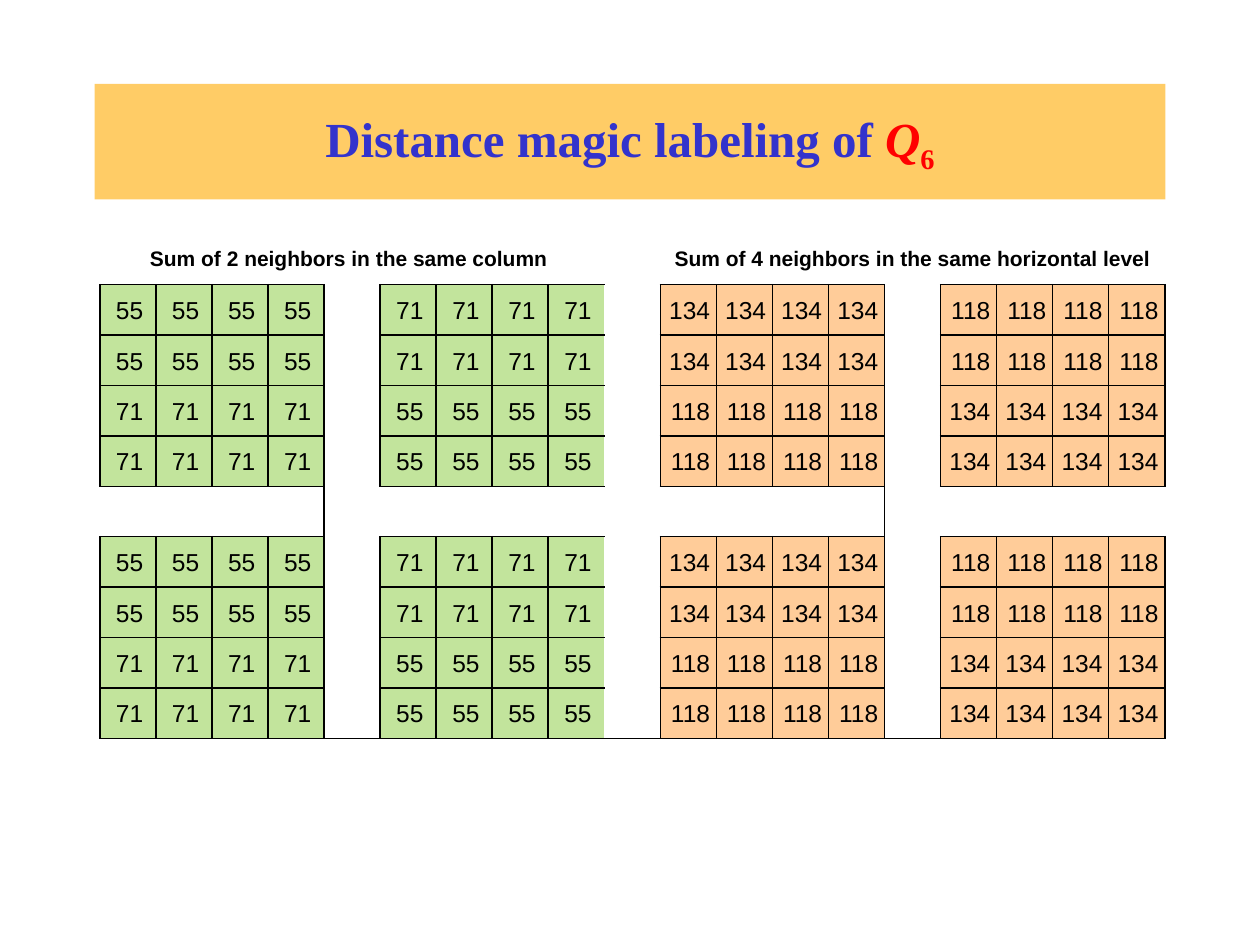
from lxml.etree import SubElement
from pptx import Presentation
from pptx.dml.color import RGBColor
from pptx.enum.text import MSO_ANCHOR, PP_ALIGN
from pptx.oxml.ns import qn
from pptx.util import Pt

BLACK = RGBColor(0x00, 0x00, 0x00)
WHITE = RGBColor(0xFF, 0xFF, 0xFF)
GOLD = RGBColor(0xFF, 0xCC, 0x66)
BLUE = RGBColor(0x33, 0x33, 0xCC)
RED = RGBColor(0xFF, 0x00, 0x00)
GREEN = RGBColor(0xC2, 0xE4, 0x9C)
PEACH = RGBColor(0xFF, 0xCC, 0x99)
NO_STYLE = "{2D5ABB26-0587-4C30-8999-92F81FD0307C}"

# text, colour, italic, baseline shift
TITLE = [("Distance magic labeling of ", BLUE, False, "0"),
         ("Q", RED, True, "0"),
         ("6", RED, False, "-25000")]
# heading, fill, right margin of numbers, right margin of heading,
# row values of the left and right block
PANELS = [
    ("Sum of 2 neighbors in the same column", GREEN, 7.2,
     [(55, 55, 71, 71), (71, 71, 55, 55)]),
    ("Sum of 4 neighbors in the same horizontal level", PEACH, 3.6,
     [(134, 134, 118, 118), (118, 118, 134, 134)]),
]
SIZE = 4           # cells along a block side
STEP = SIZE + 1    # block plus its gap
BLOCK_ROWS = (1, 1 + STEP)
N_ROWS, N_COLS = 2 * STEP + 1, 4 * STEP - 1
LEFT, TOP, WIDTH, ROW_H = 57, 133.92, 609.12, 28.8


def set_format(obj, **values):
    for name, value in values.items():
        setattr(obj, name, value)


def set_borders(cell, sides):
    """Draw black 1 pt lines on the sides named in 'LRTB' and none elsewhere."""
    tc_pr = cell._tc.get_or_add_tcPr()
    for side in "LRTB":
        ln = SubElement(tc_pr, qn(f"a:ln{side}"), w=str(Pt(1)))
        if side in sides:
            fill = SubElement(ln, qn("a:solidFill"))
            SubElement(fill, qn("a:srgbClr"), val=str(BLACK))
        else:
            SubElement(ln, qn("a:noFill"))


def write(cell, text, size, bold, align, right):
    set_format(cell, margin_left=Pt(3.6), margin_top=Pt(7.2),
               margin_right=Pt(right), margin_bottom=Pt(3.6),
               vertical_anchor=MSO_ANCHOR.TOP)
    p = cell.text_frame.paragraphs[0]
    p.alignment = align
    r = p.add_run()
    r.text = str(text)
    set_format(r.font, name="Arial", size=Pt(size), bold=bold)
    r.font.color.rgb = BLACK


def merge(table, row, col, n_rows, n_cols, sides):
    """Merge an area of cells, border it and return its first cell."""
    for i in range(row, row + n_rows):
        for j in range(col, col + n_cols):
            cell = table.cell(i, j)
            set_format(cell, margin_left=0, margin_top=0,
                       margin_right=0, margin_bottom=0)
            set_borders(cell, sides)
    first = table.cell(row, col)
    first.merge(table.cell(row + n_rows - 1, col + n_cols - 1))
    return first


def add_title(s):
    title = s.shapes.title
    set_format(title, left=Pt(54), top=Pt(48), width=Pt(612), height=Pt(66))
    title.fill.solid()
    title.fill.fore_color.rgb = GOLD
    tf = title.text_frame
    set_format(tf, word_wrap=True, vertical_anchor=MSO_ANCHOR.MIDDLE)
    p = tf.paragraphs[0]
    p.alignment = PP_ALIGN.CENTER
    for text, color, italic, baseline in TITLE:
        r = p.add_run()
        r.text = text
        set_format(r.font, name="Times New Roman", size=Pt(28), bold=True,
                   italic=italic)
        r.font.color.rgb = color
        r.font._element.set("baseline", baseline)


def add_block(table, row, col, values, color, right):
    for i, value in enumerate(values):
        for j in range(SIZE):
            cell = table.cell(row + i, col + j)
            set_borders(cell, "LRTB")
            cell.fill.solid()
            cell.fill.fore_color.rgb = color
            write(cell, value, 14, False, PP_ALIGN.RIGHT, right)


def add_sums(s):
    frame = s.shapes.add_table(N_ROWS, N_COLS, Pt(LEFT), Pt(TOP),
                               Pt(WIDTH), Pt(ROW_H * N_ROWS))
    table = frame.table
    set_format(table, first_row=False, horz_banding=False)
    table._tbl.tblPr.find(qn("a:tableStyleId")).text = NO_STYLE
    for column in table.columns:
        column.width = Pt(WIDTH / N_COLS)
    for row in table.rows:
        row.height = Pt(ROW_H)

    for n, (heading, color, right, blocks) in enumerate(PANELS):
        left = n * 2 * STEP
        cell = merge(table, 0, left, 1, 2 * STEP - 1, "B")
        write(cell, heading, 12, True, PP_ALIGN.CENTER, right)
        merge(table, 1, left + SIZE, N_ROWS - 2, 1, "LR")
        for k, values in enumerate(blocks):
            col = left + k * STEP
            merge(table, STEP, col, 1, SIZE, "TB")
            for row in BLOCK_ROWS:
                add_block(table, row, col, values, color, right)
    merge(table, 0, 2 * STEP - 1, N_ROWS - 1, 1, "")
    footer = merge(table, N_ROWS - 1, 0, 1, N_COLS, "T")
    footer.fill.solid()
    footer.fill.fore_color.rgb = WHITE


def main():
    prs = Presentation()
    set_format(prs, slide_width=Pt(720), slide_height=Pt(540))
    s = prs.slides.add_slide(prs.slide_layouts[5])
    add_title(s)
    add_sums(s)
    prs.save("out.pptx")


if __name__ == "__main__":
    main()
